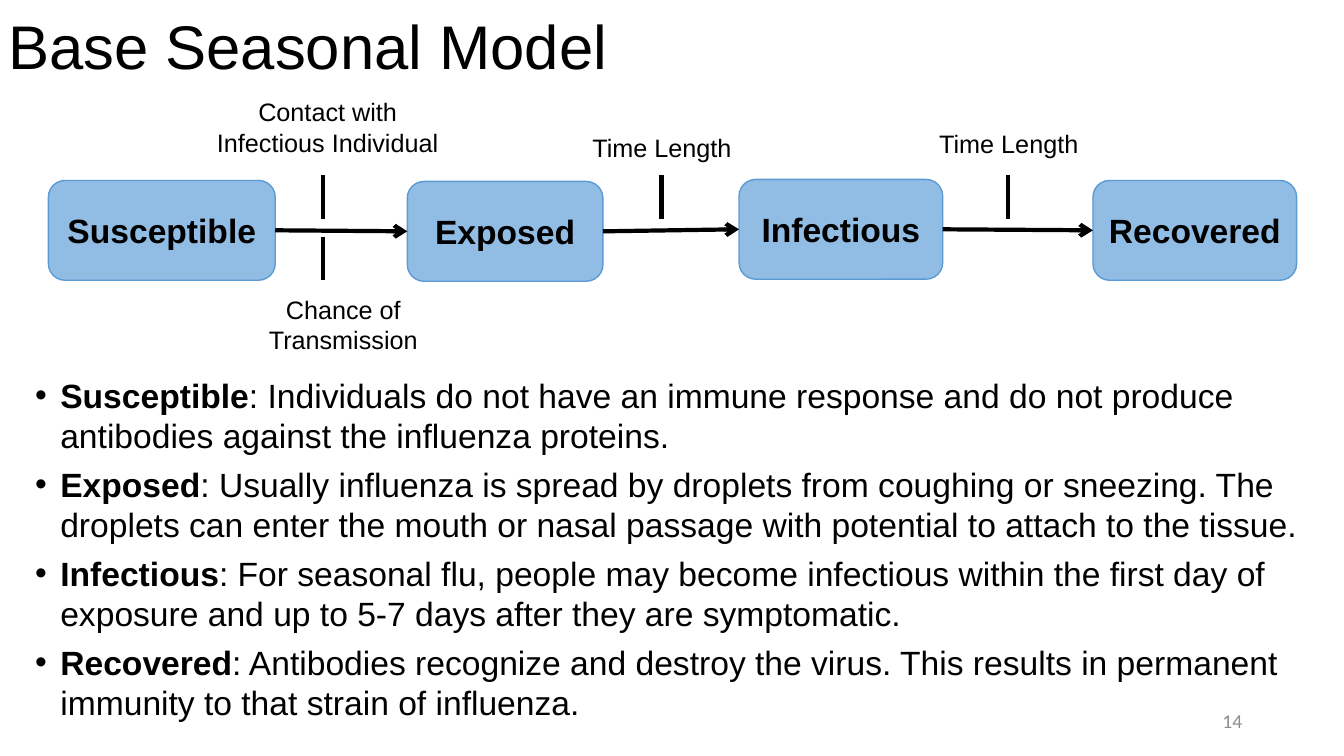
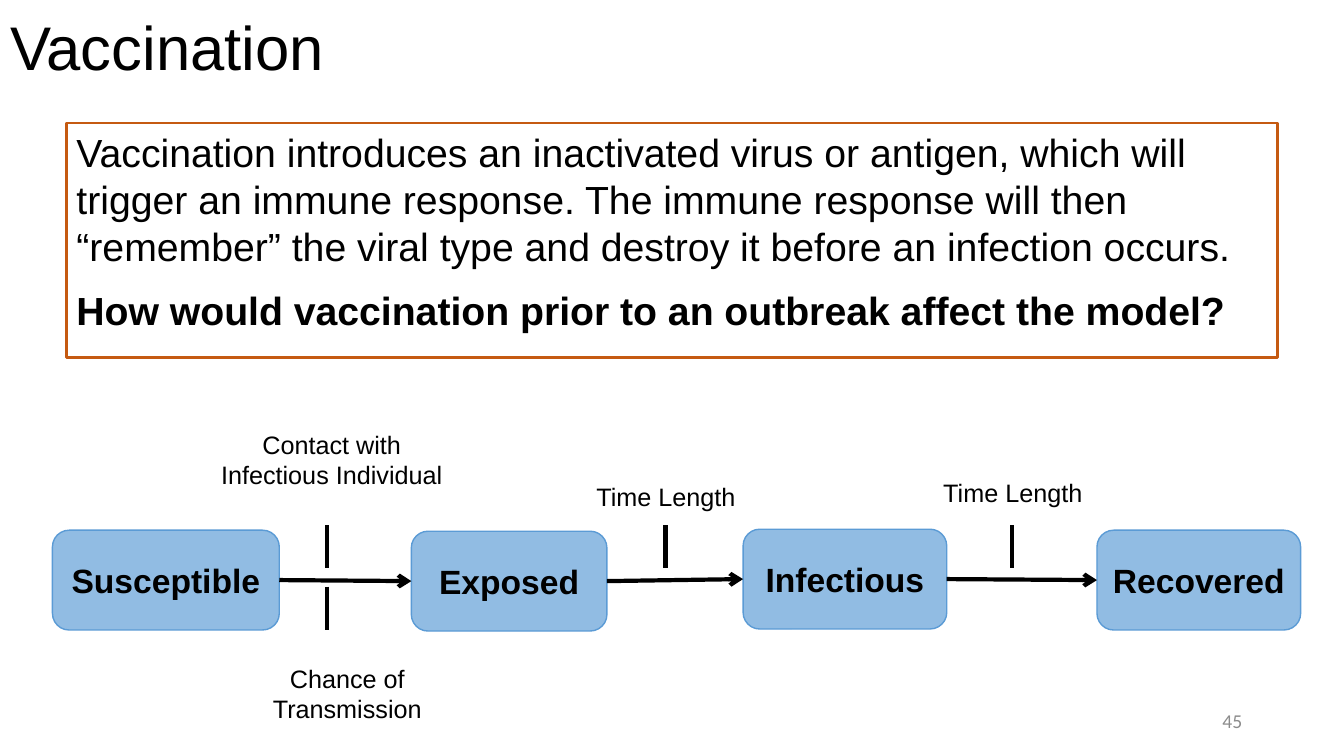
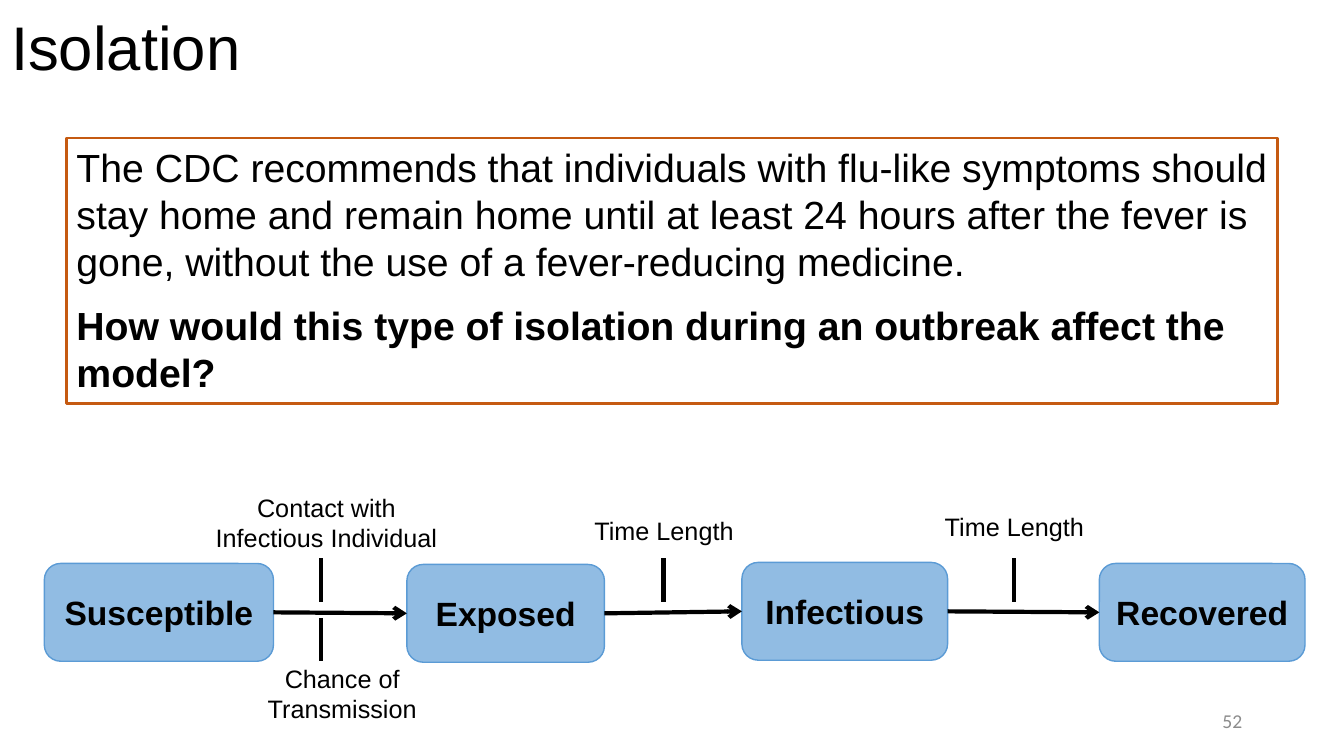
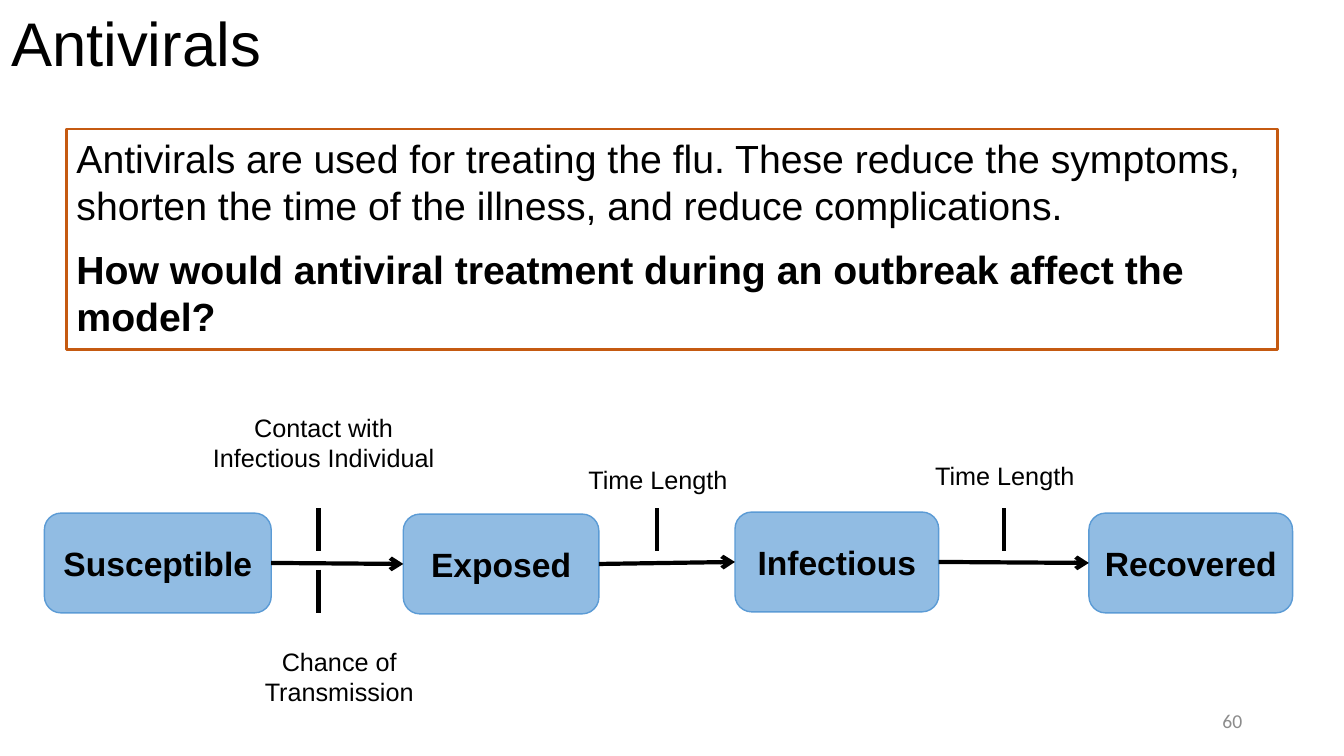
from lxml import etree
from pptx import Presentation
from pptx import util as u
from pptx.dml.color import RGBColor
from pptx.enum import shapes, text
from pptx.oxml.ns import qn

HEX = {"ink": "000000", "box": "91BCE3", "edge": "5B9BD5",
       "frame": "C55A11", "number": "8C8C8C"}
LEFT, MID, RIGHT = text.PP_ALIGN.LEFT, text.PP_ALIGN.CENTER, text.PP_ALIGN.RIGHT

# Stages of the model: name, offset from the first box, drop, width
STAGES = [("Susceptible", 0, 0, 2.25), ("Exposed", 3.56, 0.01, 1.94),
          ("Infectious", 6.85, -0.01, 2.02), ("Recovered", 10.36, 0, 2.02)]
TICKS = [2.72, 6.08, 9.52]

TERMS = [
    ("Susceptible", ": Individuals do not have an immune response and do not "
     "produce antibodies against the influenza proteins."),
    ("Exposed", ": Usually influenza is spread by droplets from coughing or "
     "sneezing. The droplets can enter the mouth or nasal passage with "
     "potential to attach to the tissue."),
    ("Infectious", ": For seasonal flu, people may become infectious within the "
     "first day of exposure and up to 5-7 days after they are symptomatic."),
    ("Recovered", ": Antibodies recognize and destroy the virus. This results in "
     "permanent immunity to that strain of influenza."),
]


def color(name):
    return RGBColor.from_string(HEX[name])


def area(x, y, w, h):
    return [u.Inches(v) for v in (x, y, w, h)]


class Deck:
    """Holds the style and the current slide."""

    def __init__(self):
        self.prs = Presentation()
        self.prs.slide_width, self.prs.slide_height = u.Inches(13.33), u.Inches(7.5)
        self.slide = None

    def style(self, para, size, bold=False, align=LEFT, ink="ink", face="Arial"):
        para.alignment = align
        for run in para.runs:
            font = run.font
            font.name, font.size, font.bold = face, u.Pt(size), bold
            font.color.rgb = color(ink)

    def page(self, title, number, x=0, y=0, w=11.5, h=1):
        self.slide = self.prs.slides.add_slide(self.prs.slide_layouts[5])
        head = self.slide.shapes.title
        head.left, head.top, head.width, head.height = area(x, y, w, h)
        frame = head.text_frame
        frame.text = title
        frame.auto_size = text.MSO_AUTO_SIZE.NONE
        frame.vertical_anchor = text.MSO_ANCHOR.MIDDLE
        frame.paragraphs[0].line_spacing = 0.9
        self.style(frame.paragraphs[0], 44)
        # Page number
        foot = self.label(number, 9.42, 6.95, 3, 0.4)
        foot.vertical_anchor = text.MSO_ANCHOR.MIDDLE
        self.style(foot.paragraphs[0], 14, align=RIGHT, ink="number", face="Calibri")

    def label(self, words, x, y, w, h):
        frame = self.slide.shapes.add_textbox(*area(x, y, w, h)).text_frame
        frame.word_wrap = True
        frame.text = words
        self.style(frame.paragraphs[0], 18, align=MID)
        return frame

    def shape(self, kind, x, y, w, h, edge, width, fill=None):
        item = self.slide.shapes.add_shape(kind, *area(x, y, w, h))
        item.shadow.inherit = False
        if fill:
            item.fill.solid()
            item.fill.fore_color.rgb = color(fill)
        else:
            item.fill.background()
        item.line.color.rgb, item.line.width = color(edge), u.Pt(width)
        return item

    def stage(self, name, x, y, w, h):
        box = self.shape(shapes.MSO_SHAPE.ROUNDED_RECTANGLE, x, y, w, h,
                         "edge", 1, "box")
        box.text_frame.text = name
        box.text_frame.vertical_anchor = text.MSO_ANCHOR.MIDDLE
        self.style(box.text_frame.paragraphs[0], 24, True, MID)
        return box

    def line(self, x1=0, y1=0, x2=0, y2=0):
        item = self.slide.shapes.add_connector(
            shapes.MSO_CONNECTOR.STRAIGHT, *area(x1, y1, x2, y2))
        item.line.color.rgb, item.line.width = color("ink"), u.Pt(3)
        etree.SubElement(item._element.spPr, qn("a:effectLst"))
        return item

    def arrow(self, start, end):
        item = self.line()
        item.begin_connect(start, 3)
        item.end_connect(end, 1)
        tip = etree.SubElement(item.line._get_or_add_ln(), qn("a:tailEnd"))
        tip.set("type", "arrow")

    def flow(self, x, y, above, below, h=0.99, k=1):
        """Draw the model; k stretches it sideways."""
        boxes = [self.stage(name, x + k * dx, y + dy, k * w, h)
                 for name, dx, dy, w in STAGES]
        for start, end in zip(boxes, boxes[1:]):
            self.arrow(start, end)
        # Ticks above the arrows, and one below the first
        size = 0.43
        spots = [(dx, y - 0.05) for dx in TICKS] + [(TICKS[0], y + h - size)]
        for dx, top in spots:
            self.line(x + k * dx, top, x + k * dx, top + size)
        # Labels: words, offset, top, width, height
        for words, dx, dy, w, tall in [
                ("Contact with Infectious Individual", 1.47, above, 2.6, 0.71),
                ("Chance of Transmission", 1.59, below, 2.67, 0.71),
                ("Time Length", 4.89, -0.53, 2.39, 0.4),
                ("Time Length", 8.33, -0.57, 2.39, 0.4)]:
            self.label(words, x + k * dx, y + dy, k * w, tall)

    def panel(self, fact, ask, y, h):
        box = self.shape(shapes.MSO_SHAPE.RECTANGLE, 0.66, y, 12.01, h, "frame", 2)
        frame = box.text_frame
        frame.vertical_anchor = text.MSO_ANCHOR.TOP
        frame.text = fact + "\n" + ask
        for para, bold in zip(frame.paragraphs, (False, True)):
            para.space_after = u.Pt(12)
            self.style(para, 28, bold)

    def bullets(self, terms, x, y, w, h):
        frame = self.label("", x, y, w, h)
        frame.text = "\n".join(term for term, _ in terms)
        for para, (_, rest) in zip(frame.paragraphs, terms):
            para.space_before = u.Pt(6)
            para.add_run().text = rest
            self.style(para, 24)
            para.runs[0].font.bold = True
            props = para._p.get_or_add_pPr()
            props.set("marL", str(u.Inches(0.25)))
            props.set("indent", str(u.Inches(-0.25)))
            etree.SubElement(props, qn("a:buFont")).set("typeface", "Arial")
            etree.SubElement(props, qn("a:buChar")).set("char", "•")


def main():
    deck = Deck()

    # Base model
    deck.page("Base Seasonal Model", "14", x=-0.02, y=-0.01)
    deck.flow(0.48, 1.79, -0.88, 1.08)
    deck.bullets(TERMS, 0.25, 3.67, 12.82, 3.6)

    # Vaccination
    deck.page("Vaccination", "45", w=13.33)
    deck.flow(0.52, 5.26, -1.05, 1.27)
    deck.panel("Vaccination introduces an inactivated virus or antigen, which will "
               "trigger an immune response. The immune response will then "
               "“remember” the viral type and destroy it before an infection occurs.",
               "How would vaccination prior to an outbreak affect the model?",
               1.22, 2.33)

    # Isolation
    deck.page("Isolation", "52", x=0.01)
    deck.flow(0.44, 5.59, -0.76, 0.94, h=0.97, k=1.01)
    deck.panel("The CDC recommends that individuals with flu-like symptoms should "
               "stay home and remain home until at least 24 hours after the fever "
               "is gone, without the use of a fever-reducing medicine.",
               "How would this type of isolation during an outbreak affect the model?",
               1.37, 2.63)

    # Antivirals
    deck.page("Antivirals", "60", x=0.01, y=0.02, w=13.32, h=0.88)
    deck.flow(0.44, 5.09, -1.05, 1.27)
    deck.panel("Antivirals are used for treating the flu. These reduce the symptoms, "
               "shorten the time of the illness, and reduce complications.",
               "How would antiviral treatment during an outbreak affect the model?",
               1.28, 2.19)

    deck.prs.save("out.pptx")


if __name__ == "__main__":
    main()
